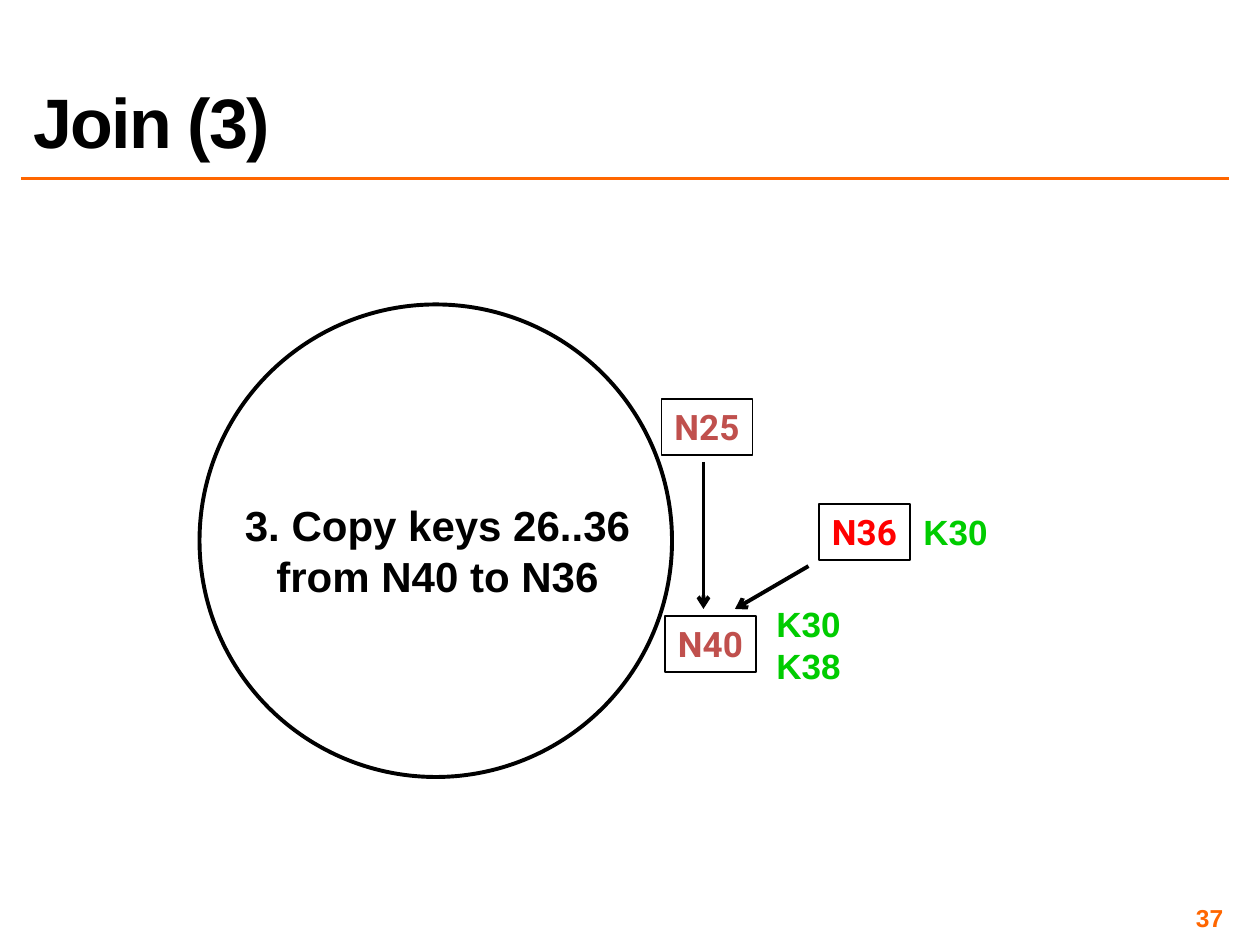
from lxml import etree
from pptx import Presentation
from pptx.dml.color import RGBColor
from pptx.enum.shapes import MSO_CONNECTOR, MSO_SHAPE
from pptx.enum.text import MSO_ANCHOR, MSO_AUTO_SIZE, PP_ALIGN
from pptx.oxml.ns import qn
from pptx.util import Pt

STRAIGHT = MSO_CONNECTOR.STRAIGHT
OVAL, RECTANGLE = MSO_SHAPE.OVAL, MSO_SHAPE.RECTANGLE
TOP, MIDDLE, BOTTOM = MSO_ANCHOR.TOP, MSO_ANCHOR.MIDDLE, MSO_ANCHOR.BOTTOM
LEFT, CENTER, RIGHT = PP_ALIGN.LEFT, PP_ALIGN.CENTER, PP_ALIGN.RIGHT
GROW = MSO_AUTO_SIZE.SHAPE_TO_FIT_TEXT

BLACK, ORANGE, GREEN = "000000", "FF6600", "00CC00"
MEMBER, NEWCOMER = "C0504D", "FF0000"
BOX_WIDTH, BOX_HEIGHT = 52, 32


def rgb(value):
    return RGBColor.from_string(value)


class RingSlide:
    """Holds the diagram style and the slide being drawn."""

    font = "Arial"
    node_font = "Roboto"
    thin, thick = 0.75, 2.25
    leading = 1.2

    def __init__(self, slide):
        self.slide = slide

    def outline(self, kind, left, top, width, height, weight):
        shape = self.slide.shapes.add_shape(
            kind, Pt(left), Pt(top), Pt(width), Pt(height))
        shape.shadow.inherit = False
        shape.fill.background()
        shape.line.color.rgb = rgb(BLACK)
        shape.line.width = Pt(weight)
        return shape

    def fill_text(self, shape, lines, size, color, font=font, align=CENTER,
                  spacing=None, tracking=None, **frame_format):
        frame = shape.text_frame
        for name, value in frame_format.items():
            setattr(frame, name, value)
        for number, line in enumerate(lines):
            paragraph = frame.add_paragraph() if number else frame.paragraphs[0]
            paragraph.alignment = align
            paragraph.line_spacing = spacing
            run = paragraph.add_run()
            run.text = line
            style = {"name": font, "size": Pt(size), "bold": True}
            for name, value in style.items():
                setattr(run.font, name, value)
            run.font.color.rgb = rgb(color)
            if tracking:
                run.font._element.set("spc", str(tracking * 100))

    def text(self, left, top, width, height, lines, size, color, **options):
        box = self.slide.shapes.add_textbox(
            Pt(left), Pt(top), Pt(width), Pt(height))
        self.fill_text(box, lines, size, color, **options)

    def label(self, left, top, width, height, lines, size, color):
        """Centred text whose box fits its lines."""
        self.text(left, top, width, height, lines, size, color,
                  spacing=Pt(size * self.leading), word_wrap=False,
                  auto_size=GROW)

    def node(self, left, top, name, color):
        box = self.outline(RECTANGLE, left, top, BOX_WIDTH, BOX_HEIGHT, self.thin)
        self.fill_text(box, [name], 20, color, font=self.node_font,
                       spacing=Pt(20 * self.leading), word_wrap=False,
                       auto_size=GROW, vertical_anchor=TOP)

    def line(self, start, end, color, weight, arrow=False):
        connector = self.slide.shapes.add_connector(
            STRAIGHT, *(Pt(value) for value in (*start, *end)))
        connector.line.color.rgb = rgb(color)
        connector.line.width = Pt(weight)
        if arrow:
            etree.SubElement(connector.line._get_or_add_ln(),
                             qn("a:tailEnd"), type="arrow")
        etree.SubElement(connector._element.spPr, qn("a:effectLst"))


def main():
    deck = Presentation()
    deck.slide_width, deck.slide_height = Pt(720), Pt(540)
    ring = RingSlide(deck.slides.add_slide(deck.slide_layouts[6]))

    ring.line((12, 102), (702, 102), ORANGE, 2)
    margins = dict.fromkeys(
        ("margin_left", "margin_top", "margin_right", "margin_bottom"), Pt(3))
    ring.text(534, 516, 168, 17, ["37"], 14, ORANGE, align=RIGHT,
              word_wrap=True, vertical_anchor=MIDDLE, **margins)
    ring.text(12, 12, 690, 84, ["Join (3)"], 40, BLACK, align=LEFT,
              spacing=0.8, tracking=-1, word_wrap=True, vertical_anchor=BOTTOM)

    ring.outline(OVAL, 114, 174, 270, 270, ring.thick)
    for left, top, name, color in (
        (468, 288, "N36", NEWCOMER),
        (380, 352, "N40", MEMBER),
        (378, 228, "N25", MEMBER),
    ):
        ring.node(left, top, name, color)

    ring.line((402, 264), (402, 348), BLACK, ring.thick, arrow=True)
    ring.line((462, 323.5), (420, 348), BLACK, ring.thick, arrow=True)

    ring.label(131.5, 282, 237, 65.5,
               ["3. Copy keys 26..36", "from N40 to N36"], 24, BLACK)
    ring.label(436, 340.5, BOX_WIDTH, 55.5, ["K30", "K38"], 20, GREEN)
    ring.label(468 + BOX_WIDTH, 288, BOX_WIDTH, BOX_HEIGHT, ["K30"], 20, GREEN)

    deck.save("out.pptx")


if __name__ == "__main__":
    main()
